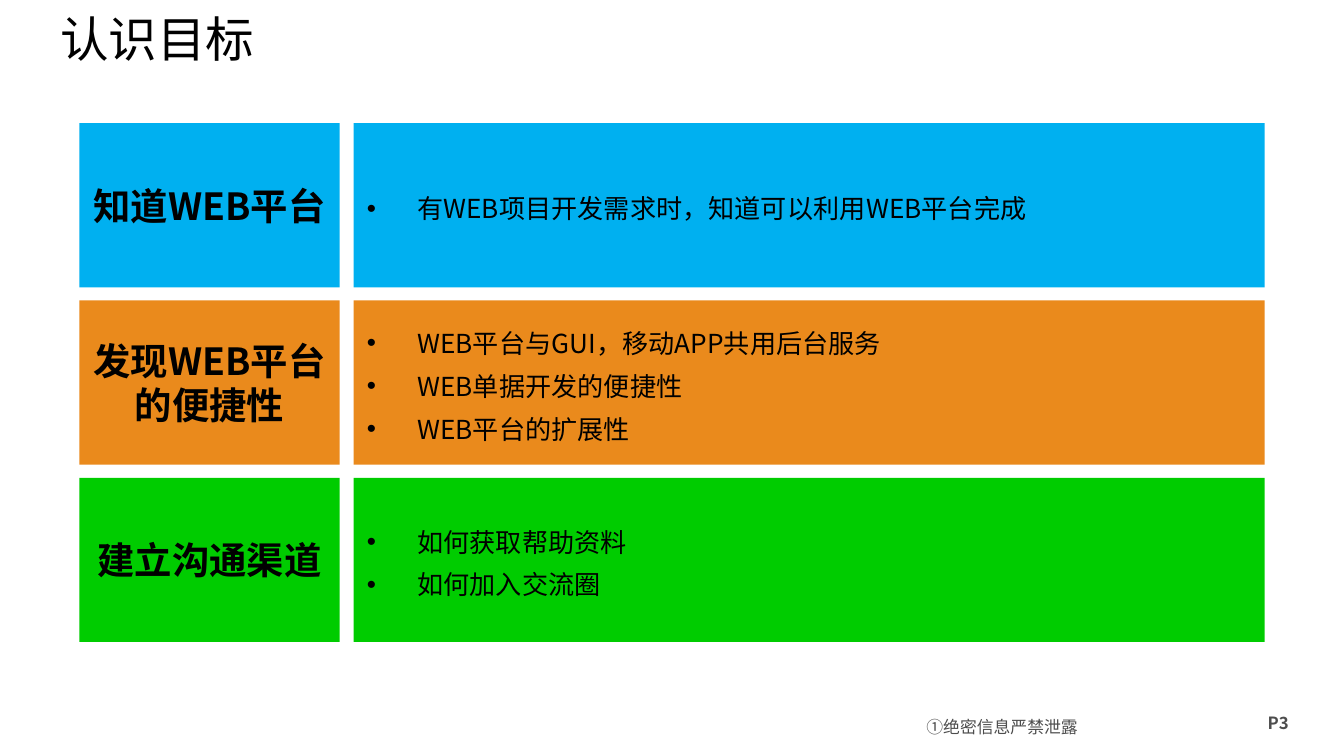
from dataclasses import dataclass

from lxml.etree import SubElement
from pptx import Presentation
from pptx.dml.color import RGBColor
from pptx.enum.shapes import MSO_SHAPE
from pptx.enum.text import MSO_ANCHOR as Anchor, MSO_AUTO_SIZE as AutoSize, PP_ALIGN as Align
from pptx.oxml.ns import qn
from pptx.util import Pt


@dataclass(frozen=True)
class Theme:
    font: str = "Noto Sans CJK SC"
    ink: str = "000000"
    muted: str = "4D4D4D"
    blue: str = "00B0F0"
    orange: str = "EA8A1C"
    green: str = "00CC00"
    title_size: int = 26
    label_size: int = 20
    body_size: int = 14
    footer_size: int = 9


def write_text(frame, lines, *, theme, size, color=None, bold=False, align=Align.LEFT,
               anchor=Anchor.TOP, line_spacing=None, space_before=0, bullet_indent=0,
               margins=(7.2, 3.6)):
    """Fill a text frame with one paragraph per line; lengths are in points."""
    frame.word_wrap = True
    frame.auto_size = AutoSize.NONE
    frame.vertical_anchor = anchor
    frame.margin_left = frame.margin_right = Pt(margins[0])
    frame.margin_top = frame.margin_bottom = Pt(margins[1])
    for index, line in enumerate(lines):
        paragraph = frame.add_paragraph() if index else frame.paragraphs[0]
        paragraph.alignment = align
        paragraph.line_spacing = line_spacing
        paragraph.space_before = Pt(space_before if index else 0)
        if bullet_indent:
            add_bullet(paragraph, bullet_indent)
        run = paragraph.add_run()
        run.text = line
        run.font.size = Pt(size)
        run.font.bold = bold
        run.font.color.rgb = RGBColor.from_string(color or theme.ink)
        run.font.name = theme.font
        SubElement(run.font._element, qn("a:ea"), typeface=theme.font)


def add_bullet(paragraph, indent):
    properties = paragraph._p.get_or_add_pPr()
    properties.set("marL", str(Pt(indent)))
    properties.set("indent", str(-Pt(indent)))
    SubElement(properties, qn("a:buFont"), typeface="Arial")
    SubElement(properties, qn("a:buChar"), char="•")


class SlideBuilder:
    def __init__(self, slide, theme):
        self.slide = slide
        self.theme = theme

    def title(self, text, left, top, width, height):
        shape = self.slide.shapes.title
        shape.left, shape.top, shape.width, shape.height = map(Pt, (left, top, width, height))
        write_text(shape.text_frame, [text], theme=self.theme, size=self.theme.title_size,
                   anchor=Anchor.MIDDLE)

    def text(self, text, left, top, width, height, **text_format):
        shape = self.slide.shapes.add_textbox(*map(Pt, (left, top, width, height)))
        write_text(shape.text_frame, [text], theme=self.theme, **text_format)

    def block(self, lines, left, top, width, height, fill, **text_format):
        box = map(Pt, (left, top, width, height))
        shape = self.slide.shapes.add_shape(MSO_SHAPE.RECTANGLE, *box)
        shape.shadow.inherit = False
        shape.fill.solid()
        shape.fill.fore_color.rgb = RGBColor.from_string(fill)
        shape.line.fill.background()
        write_text(shape.text_frame, lines, theme=self.theme, anchor=Anchor.MIDDLE,
                   **text_format)

    def goal_row(self, label, points, top, height, fill):
        self.block([label], 42.5, top, 139.5, height, fill, size=self.theme.label_size,
                   bold=True, align=Align.CENTER)
        self.block(points, 189.5, top, 488, height, fill, size=self.theme.body_size,
                   line_spacing=1.2, space_before=2.8, bullet_indent=27)


def main():
    theme = Theme()
    presentation = Presentation()
    presentation.slide_width, presentation.slide_height = Pt(720), Pt(405)
    title_only = presentation.slide_layouts[5]
    builder = SlideBuilder(presentation.slides.add_slide(title_only), theme)

    builder.title("认识目标", 25, 0, 562, 41)

    goals = [
        ("知道WEB平台", ["有WEB项目开发需求时，知道可以利用WEB平台完成"], theme.blue),
        ("发现WEB平台的便捷性",
         ["WEB平台与GUI，移动APP共用后台服务", "WEB单据开发的便捷性", "WEB平台的扩展性"],
         theme.orange),
        ("建立沟通渠道", ["如何获取帮助资料", "如何加入交流圈"], theme.green),
    ]
    first_top, row_pitch, row_height = 66, 95, 88
    for row, (label, points, fill) in enumerate(goals):
        builder.goal_row(label, points, first_top + row * row_pitch, row_height, fill)

    footer = dict(size=theme.footer_size, color=theme.muted)
    builder.text("①绝密信息严禁泄露", 490.5, 380, 127.5, 19.5, align=Align.JUSTIFY,
                 line_spacing=Pt(14), margins=(5.8, 0.7), **footer)
    builder.text("P3", 672, 378, 40, 18, bold=True, **footer)

    presentation.save("out.pptx")


if __name__ == "__main__":
    main()
